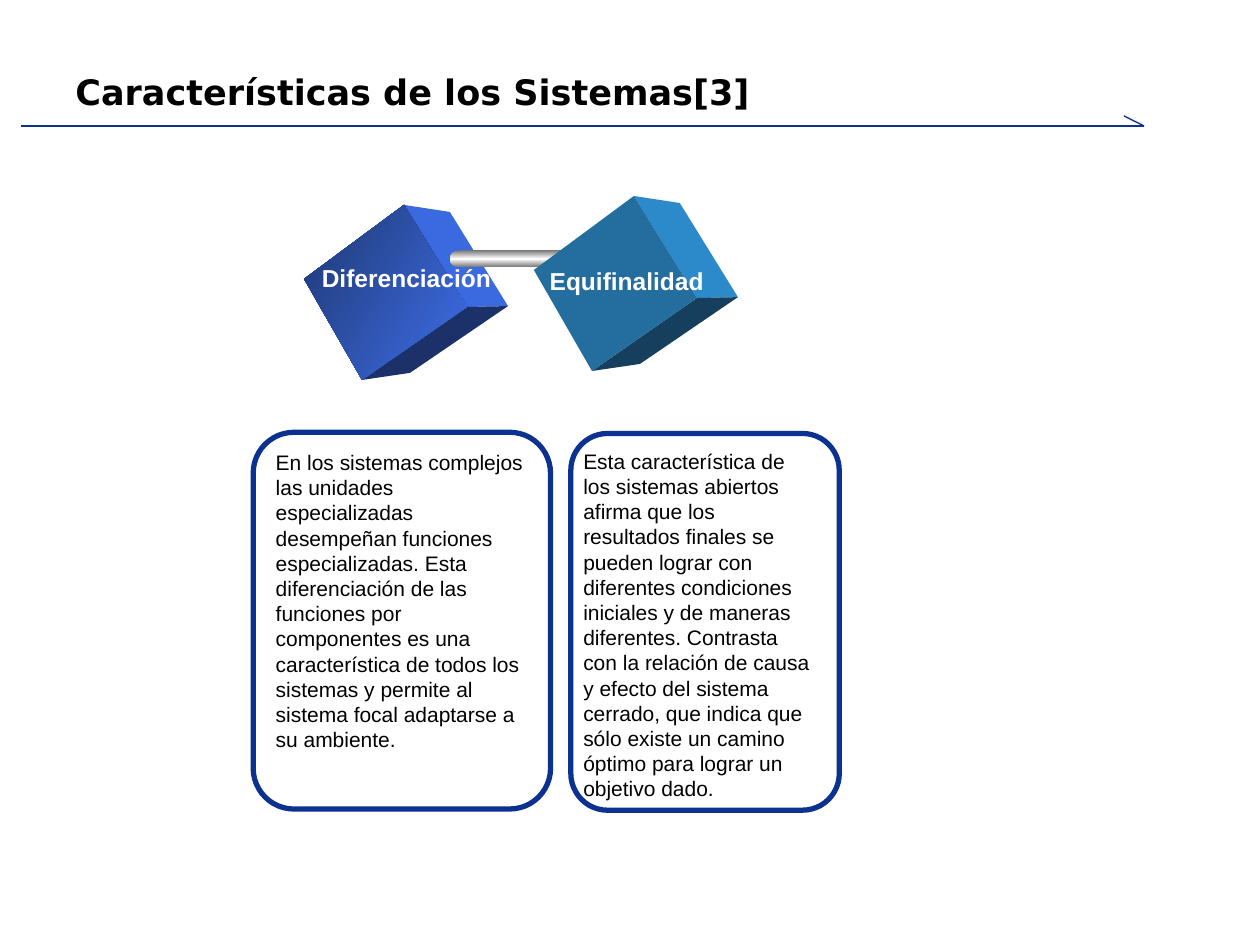
from lxml import etree
from pptx import Presentation
from pptx import util as u
from pptx.dml.color import RGBColor
from pptx.enum import shapes, text
from pptx.oxml.ns import qn

Pt = u.Pt
NAVY, BLACK, WHITE = "0B3191", "000000", "FFFFFF"
STEEL = [(0, "767676"), (50, "FFFFFF"), (100, "767676")]

# Content: left, top, width, height in points
TITLE = ("Características de los Sistemas[3]", (36, 30.2, 606, 44.6))
RULES = [(12.2, 72, 653.8, 72), (642.2, 66.2, 653.8, 72)]
FRAMES = [(326.2, 247.7, 153.4, 215.3), (144.7, 247, 169.9, 215.3)]
NOTES = [
    ("En los sistemas complejos las unidades especializadas desempeñan "
     "funciones especializadas. Esta diferenciación de las funciones por "
     "componentes es una característica de todos los sistemas y permite al "
     "sistema focal adaptarse a su ambiente.", (150.5, 253.4, 158.4, 180)),
    ("Esta característica de los sistemas abiertos afirma que los resultados "
     "finales se pueden lograr con diferentes condiciones iniciales y de "
     "maneras diferentes. Contrasta con la relación de causa y efecto del "
     "sistema cerrado, que indica que sólo existe un camino óptimo para "
     "lograr un objetivo dado.", (326.2, 252.7, 147.6, 208.8)),
]
LABELS = [("Diferenciación", (175, 146.9, 114.5, 23.8)),
          ("Equifinalidad", (305.3, 148.3, 105.8, 23.8))]

# Cube corners, and the faces that join them
CORNERS = dict(w=(173.7, 159.4), n=(230.9, 117.1), c=(266.9, 175.4),
               s=(206.9, 217.1), ne=(257.1, 121.1), e=(290.3, 174.9),
               se=(234.3, 213.1))
FACES = [("n", "ne", "e", "c"), ("s", "c", "e", "se"), ("w", "n", "c", "s")]
BLUE = ["3B69E0", "1C316A", [(0, "1F3873"), (100, "3E6EE8")]]
TEAL = ["2C8ACA", "163F5D", "246D9F"]

deck = Presentation()
deck.slide_width, deck.slide_height = Pt(720), Pt(540)
slide = deck.slides.add_slide(deck.slide_layouts[6])
parts = slide.shapes


def color(code):
    return RGBColor.from_string(code)


def paint(shape, fill=None, angle=90):
    """Fill with nothing, one colour, or a list of gradient stops."""
    shape.shadow.inherit = False
    shape.line.fill.background()
    if fill is None:
        shape.fill.background()
    elif isinstance(fill, str):
        shape.fill.solid()
        shape.fill.fore_color.rgb = color(fill)
    else:
        shape.fill.gradient()
        grad = shape.fill._fill._gradFill
        for kid in list(grad):
            grad.remove(kid)
        stops = etree.SubElement(grad, qn("a:gsLst"))
        for place, code in fill:
            stop = etree.SubElement(stops, qn("a:gs"), pos=str(place * 1000))
            etree.SubElement(stop, qn("a:srgbClr"), val=code)
        etree.SubElement(grad, qn("a:lin"), ang=str(angle * 60000), scaled="0")


def write(words, box, size, code, bold=False, face="Arial", wrap=True):
    frame = parts.add_textbox(*map(Pt, box)).text_frame
    frame.word_wrap = wrap
    para = frame.paragraphs[0]
    para.text = words
    font = para.font
    font.name, font.size, font.bold = face, Pt(size), bold
    font.color.rgb = color(code)
    return frame


def cube(fills, dx=0, dy=0):
    for face, fill in zip(FACES, fills):
        spots = [(Pt(CORNERS[k][0] + dx), Pt(CORNERS[k][1] + dy))
                 for k in face]
        pen = parts.build_freeform(*spots[0], scale=1.0)
        pen.add_line_segments(spots[1:], close=True)
        paint(pen.convert_to_shape(), fill, 30)


# Title and its arrow rule
head = write(*TITLE, 20, BLACK, True, "DejaVu Sans")
head.vertical_anchor = text.MSO_ANCHOR.MIDDLE
for ends in RULES:
    rule = parts.add_connector(shapes.MSO_CONNECTOR.STRAIGHT, *map(Pt, ends))
    rule.line.color.rgb = color(NAVY)
    rule.line.width = Pt(0.75)
    etree.SubElement(rule._element.spPr, qn("a:effectLst"))

# Rounded frames
for box in FRAMES:
    frame = parts.add_shape(shapes.MSO_SHAPE.ROUNDED_RECTANGLE, *map(Pt, box))
    frame.adjustments[0] = 0.137
    paint(frame)
    frame.line.color.rgb = color(NAVY)
    frame.line.width = Pt(3)

# Two cubes joined by a rod
cube(BLUE)
for kind, box in [(shapes.MSO_SHAPE.OVAL, (257, 143.1, 12.2, 9.7)),
                  (shapes.MSO_SHAPE.RECTANGLE, (263.2, 143.1, 59, 9.7))]:
    paint(parts.add_shape(kind, *map(Pt, box)), STEEL)
cube(TEAL, 131.4, -5.1)

# Cube labels and notes
for words, box in LABELS:
    label = write(words, box, 14, WHITE, True, wrap=False)
    label.paragraphs[0].alignment = text.PP_ALIGN.CENTER
for words, box in NOTES:
    write(words, box, 12, BLACK)

deck.save("out.pptx")
